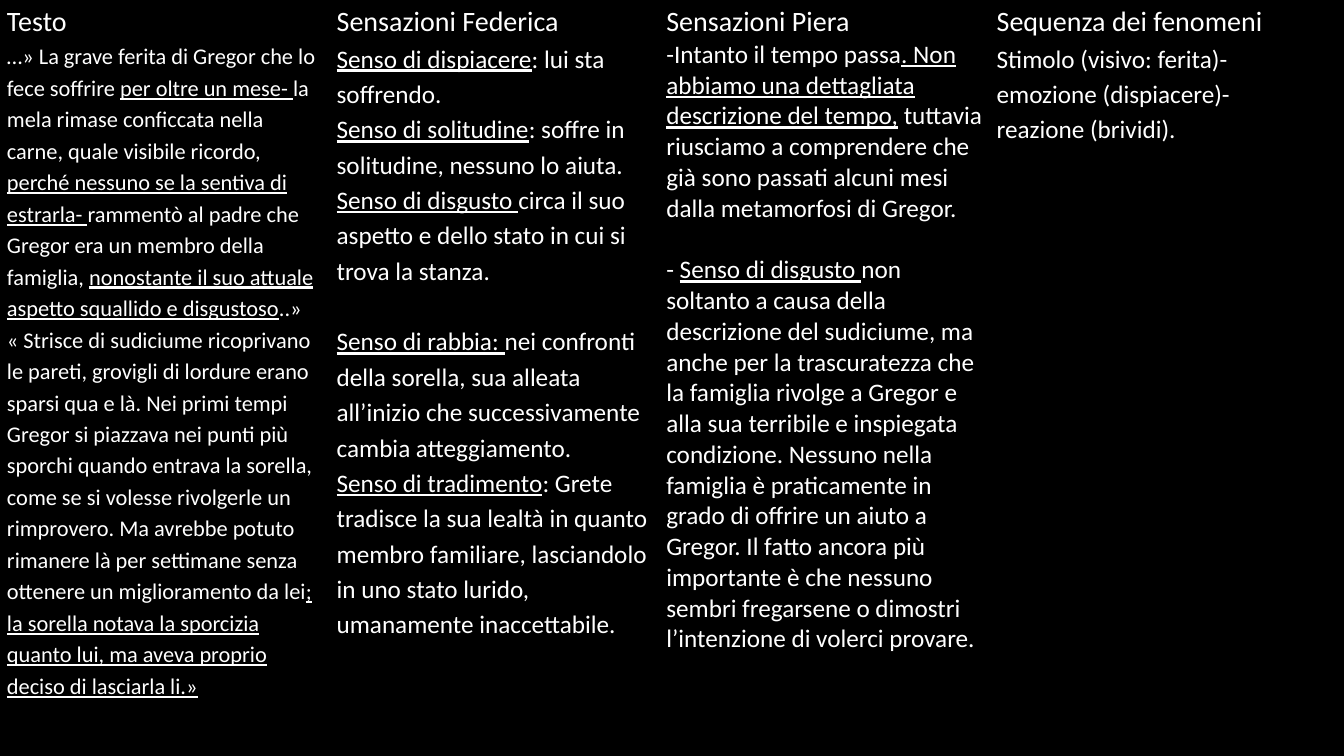
from dataclasses import dataclass

import pptx
import pptx.dml.color
import pptx.oxml
import pptx.oxml.ns
import pptx.table
import pptx.text.text
import pptx.util

COLOURS = {"background": "000000", "text": "FFFFFF", "border": "000000"}
FONT = "Calibri"
HEADING_SIZE = 20
ROW_HEIGHTS = (22.5, 500)
BORDER_SIDES = ("L", "R", "T", "B")


@dataclass(frozen=True)
class Passage:
    """A paragraph whose underlined words stand between underscores."""

    text: str
    gap: float = 0


@dataclass(frozen=True)
class Column:
    """A table column with its heading, body passages and format."""

    heading: str
    width: float
    size: float
    spacing: float
    passages: tuple[Passage, ...]


COLUMNS = (
    Column("Testo", 235.5, 16, 1.15, (
        Passage(
            "…» La grave ferita di Gregor che lo fece soffrire _per oltre un mese- _"
            "la mela rimase conficcata nella carne, quale visibile ricordo, "
            "_perché nessuno se la sentiva di estrarla- _rammentò al padre che Gregor "
            "era un membro della famiglia, "
            "_nonostante il suo attuale aspetto squallido e disgustoso_..»\n"
            "« Strisce di sudiciume ricoprivano le pareti, grovigli di lordure erano "
            "sparsi qua e là. Nei primi tempi Gregor si piazzava nei punti più sporchi "
            "quando entrava la sorella, come se si volesse rivolgerle un rimprovero. "
            "Ma avrebbe potuto rimanere là per settimane senza ottenere un "
            "miglioramento da lei_; la sorella notava la sporcizia quanto lui, ma "
            "aveva proprio deciso di lasciarla li.»_"
        ),
    )),
    Column("Sensazioni Federica", 235.5, 18, 1.15, (
        Passage("_Senso di dispiacere_: lui sta soffrendo."),
        Passage("_Senso di solitudine_: soffre in solitudine, nessuno lo aiuta."),
        Passage(
            "_Senso di disgusto _circa il suo aspetto e dello stato in cui si trova "
            "la stanza."
        ),
        Passage(
            "_Senso di rabbia: _nei confronti della sorella, sua alleata all’inizio "
            "che successivamente cambia atteggiamento.",
            gap=25.25,
        ),
        Passage(
            "_Senso di tradimento_: Grete tradisce la sua lealtà in quanto membro "
            "familiare, lasciandolo in uno stato lurido, umanamente inaccettabile."
        ),
    )),
    Column("Sensazioni Piera", 236, 18, 1, (
        Passage(
            "-Intanto il tempo passa_. Non abbiamo una dettagliata descrizione del "
            "tempo,_ tuttavia riusciamo a comprendere che già sono passati alcuni "
            "mesi dalla metamorfosi di Gregor."
        ),
        Passage(
            "- _Senso di disgusto _non soltanto a causa della descrizione del "
            "sudiciume, ma anche per la trascuratezza che la famiglia rivolge a "
            "Gregor e alla sua terribile e inspiegata condizione. Nessuno nella "
            "famiglia è praticamente in grado di offrire un aiuto a Gregor. Il fatto "
            "ancora più importante è che nessuno sembri fregarsene o dimostri "
            "l’intenzione di volerci provare.",
            gap=22,
        ),
    )),
    Column("Sequenza dei fenomeni", 236, 18, 1.15, (
        Passage("Stimolo (visivo: ferita)-emozione (dispiacere)-reazione (brividi)."),
    )),
)


def colour(name: str) -> pptx.dml.color.RGBColor:
    """Return the named colour."""
    return pptx.dml.color.RGBColor.from_string(COLOURS[name])


def write_passage(
    para: pptx.text.text._Paragraph,
    text: str,
    *,
    size: float,
    spacing: float,
    gap: float = 0,
) -> None:
    """Write text into a paragraph, underlining the parts between underscores."""
    para.line_spacing = spacing
    if gap:
        para.space_before = pptx.util.Pt(gap)
    for index, part in enumerate(text.split("_")):
        for number, line in enumerate(part.split("\n")):
            if number:
                para.add_line_break()
            if line:
                span = para.add_run()
                span.text = line
                span.font.name = FONT
                span.font.size = pptx.util.Pt(size)
                span.font.color.rgb = colour("text")
                span.font.underline = index % 2 == 1


def format_cell(cell: pptx.table._Cell) -> None:
    """Set the margins, borders and fill of a cell."""
    cell.margin_left = cell.margin_right = pptx.util.Pt(5)
    cell.margin_top = cell.margin_bottom = pptx.util.Pt(0)
    properties = cell._tc.get_or_add_tcPr()
    for side in BORDER_SIDES:
        properties.append(pptx.oxml.parse_xml(
            f'<a:ln{side} {pptx.oxml.ns.nsdecls("a")} w="{pptx.util.Pt(1)}">'
            f'<a:solidFill><a:srgbClr val="{COLOURS["border"]}"/></a:solidFill>'
            f"</a:ln{side}>"
        ))
    cell.fill.solid()
    cell.fill.fore_color.rgb = colour("background")


def fill_cell(
    cell: pptx.table._Cell, passages: tuple[Passage, ...], size: float, spacing: float
) -> None:
    """Format a cell and write its passages."""
    format_cell(cell)
    frame = cell.text_frame
    for index, passage in enumerate(passages):
        para = frame.add_paragraph() if index else frame.paragraphs[0]
        write_passage(para, passage.text, size=size, spacing=spacing, gap=passage.gap)


def main() -> None:
    """Build the slide with the table of reading impressions."""
    deck = pptx.Presentation()
    deck.slide_width, deck.slide_height = pptx.util.Pt(960), pptx.util.Pt(540)
    page = deck.slides.add_slide(deck.slide_layouts[6])
    page.background.fill.solid()
    page.background.fill.fore_color.rgb = colour("background")

    table = page.shapes.add_table(
        len(ROW_HEIGHTS), len(COLUMNS), pptx.util.Pt(0), pptx.util.Pt(0),
        pptx.util.Pt(sum(column.width for column in COLUMNS)),
        pptx.util.Pt(sum(ROW_HEIGHTS)),
    ).table
    table.horz_banding = False
    for row, height in zip(table.rows, ROW_HEIGHTS):
        row.height = pptx.util.Pt(height)
    for index, column in enumerate(COLUMNS):
        table.columns[index].width = pptx.util.Pt(column.width)
        fill_cell(table.cell(0, index), (Passage(column.heading),), HEADING_SIZE, 1.15)
        fill_cell(table.cell(1, index), column.passages, column.size, column.spacing)
    table.first_row = False
    deck.save("out.pptx")


if __name__ == "__main__":
    main()
